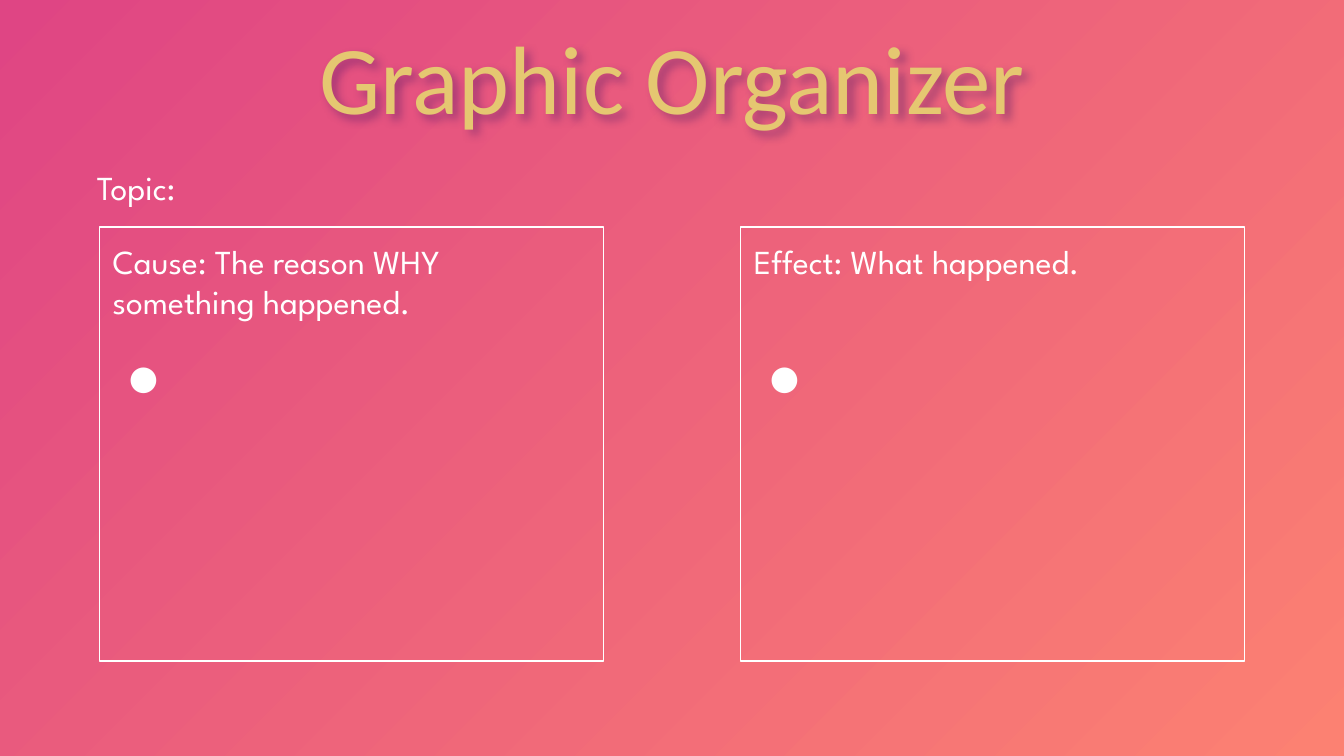
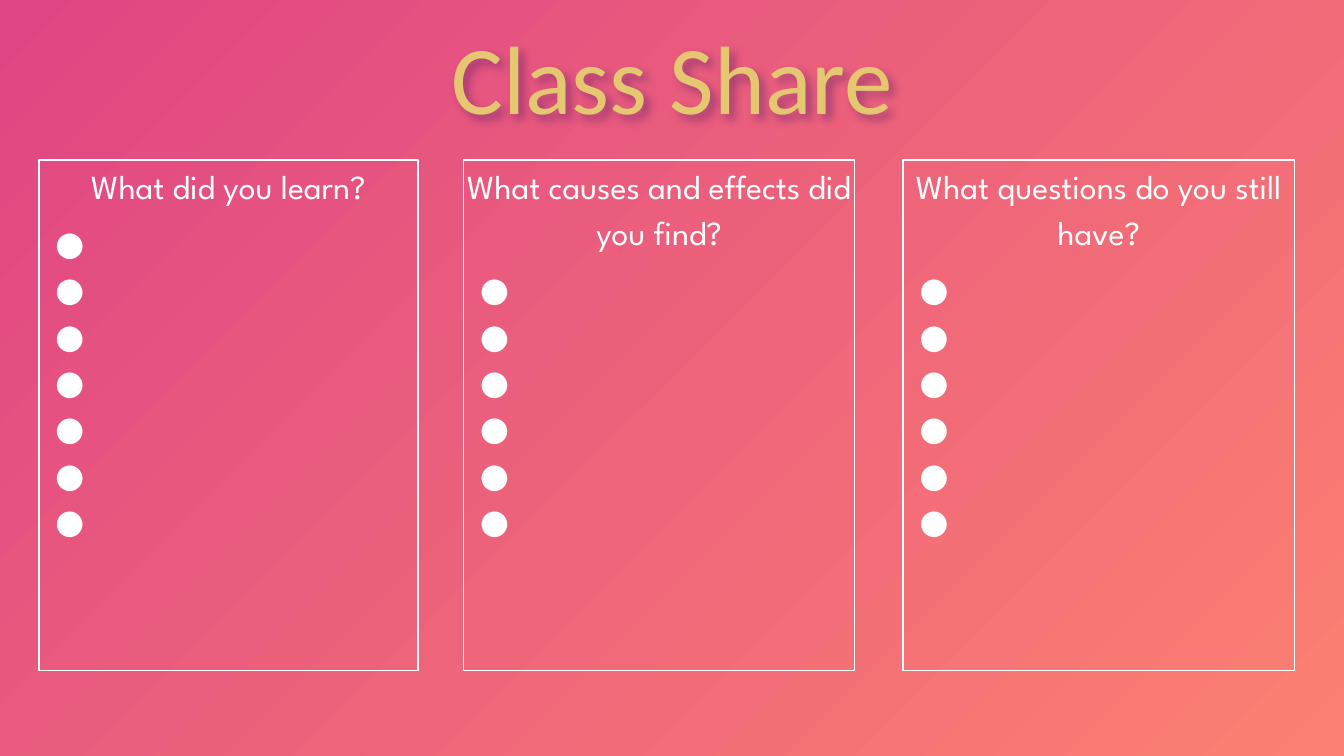
from lxml.etree import SubElement
from pptx import Presentation
from pptx.dml.color import RGBColor
from pptx.enum.shapes import MSO_SHAPE
from pptx.enum.text import MSO_ANCHOR, MSO_AUTO_SIZE, PP_ALIGN
from pptx.oxml import parse_xml
from pptx.oxml.ns import nsdecls, qn
from pptx.util import Inches, Pt

WHITE, GOLD = "FFFFFF", "E5C771"
CORAL, PINK, SHADOW = "FC8172", "DF4584", "3A1060"
TITLE_FONT, BODY_FONT = "Calibri", "League Spartan"

GRADIENT = f"""<a:gradFill {nsdecls('a')} rotWithShape="1"><a:gsLst>
<a:gs pos="0"><a:srgbClr val="{CORAL}"/></a:gs>
<a:gs pos="100000"><a:srgbClr val="{PINK}"/></a:gs></a:gsLst>
<a:path path="circle"><a:fillToRect l="100000" t="100000"/></a:path>
<a:tileRect r="-100000" b="-100000"/></a:gradFill>"""
TITLE_SHADOW = f"""<a:effectLst {nsdecls('a')}>
<a:outerShdw blurRad="63500" dist="38100" dir="2700000" algn="tl" rotWithShape="0">
<a:srgbClr val="{SHADOW}"><a:alpha val="40000"/></a:srgbClr>
</a:outerShdw></a:effectLst>"""


def style(p, size, font, color):
    for r in p.runs:
        r.font.size = Pt(size)
        r.font.name = font
        r.font.color.rgb = RGBColor.from_string(color)


def set_text(sp, text, inset=0, align=PP_ALIGN.LEFT, spacing=None, bullets=0, gap=0):
    """Write a heading and, a gap below it, a list of bullets to fill in."""
    tf = sp.text_frame
    tf.word_wrap = True
    tf.vertical_anchor = MSO_ANCHOR.TOP
    tf.margin_left = tf.margin_top = tf.margin_bottom = Inches(inset)
    tf.margin_right = Inches(1.5 * inset)
    tf.text = text
    tf.paragraphs[0].alignment = align
    for i in range(bullets):
        p = tf.add_paragraph()
        p.text = " "
        p.alignment = PP_ALIGN.LEFT
        p.space_before = Pt(gap if i == 0 else 0)
    for i, p in enumerate(tf.paragraphs):
        style(p, 18, BODY_FONT, WHITE)
        if spacing:
            p.line_spacing = spacing
        if i > 0:
            pPr = p._p.get_or_add_pPr()
            pPr.set("marL", str(Inches(0.5)))
            pPr.set("indent", str(-Inches(0.38)))
            SubElement(SubElement(pPr, qn("a:buClr")), qn("a:srgbClr"), val=WHITE)
            SubElement(pPr, qn("a:buFont"), typeface=BODY_FONT)
            SubElement(pPr, qn("a:buChar"), char="●")


prs = Presentation()
prs.slide_width = Inches(10)
prs.slide_height = prs.slide_width * 9 // 16

# Each box: left, width, heading, number of bullets, gap above the bullets
organizer = [
    (0.74, 3.75, "Cause: The reason WHY something happened.", 1, 21.5),
    (5.51, 3.75, "Effect: What happened.", 1, 43),
]
share = [
    (0.29, 2.82, "What did you learn?", 7, 8),
    (3.45, 2.91, "What causes and effects did you find?", 6, 8),
    (6.72, 2.91, "What questions do you still have?", 6, 8),
]
# Each slide: title, topic line, box top and height, text settings, boxes
slides = [
    ("Graphic Organizer", "Topic:", 1.69, 3.23, {"inset": 0.1}, organizer),
    ("Class Share", None, 1.19, 3.8,
     {"align": PP_ALIGN.CENTER, "spacing": 1.15}, share),
]

for title, topic, top, height, settings, boxes in slides:
    s = prs.slides.add_slide(prs.slide_layouts[0])

    # Background
    s.background.fill.solid()
    solid = s.element.xpath(".//p:bgPr/a:solidFill")[0]
    solid.getparent().replace(solid, parse_xml(GRADIENT))

    # Title
    sp = s.shapes.title
    sp.left, sp.top = Inches(1.07), Inches(0.22)
    sp.width, sp.height = Inches(7.86), Inches(0.79)
    sp._element.spPr.append(parse_xml(TITLE_SHADOW))
    tf = sp.text_frame
    tf.text = title
    tf.word_wrap = True
    tf.auto_size = MSO_AUTO_SIZE.NONE
    tf.vertical_anchor = MSO_ANCHOR.BOTTOM
    tf.margin_left = tf.margin_right = tf.margin_top = tf.margin_bottom = 0
    p = tf.paragraphs[0]
    p.alignment = PP_ALIGN.CENTER
    p.line_spacing = 0.9
    style(p, 52, TITLE_FONT, GOLD)

    # Topic line
    subtitle = s.placeholders[1].element
    subtitle.getparent().remove(subtitle)
    if topic:
        sp = s.shapes.add_textbox(Inches(0.72), Inches(1.2), Inches(8.65), Inches(3.8))
        set_text(sp, topic, spacing=1.15)

    # Boxes to fill in
    for left, width, heading, bullets, gap in boxes:
        sp = s.shapes.add_shape(MSO_SHAPE.RECTANGLE, Inches(left), Inches(top),
                                Inches(width), Inches(height))
        sp.shadow.inherit = False
        sp.fill.background()
        sp.line.color.rgb = RGBColor.from_string(WHITE)
        sp.line.width = Pt(0.75)
        set_text(sp, heading, bullets=bullets, gap=gap, **settings)

prs.save("out.pptx")
